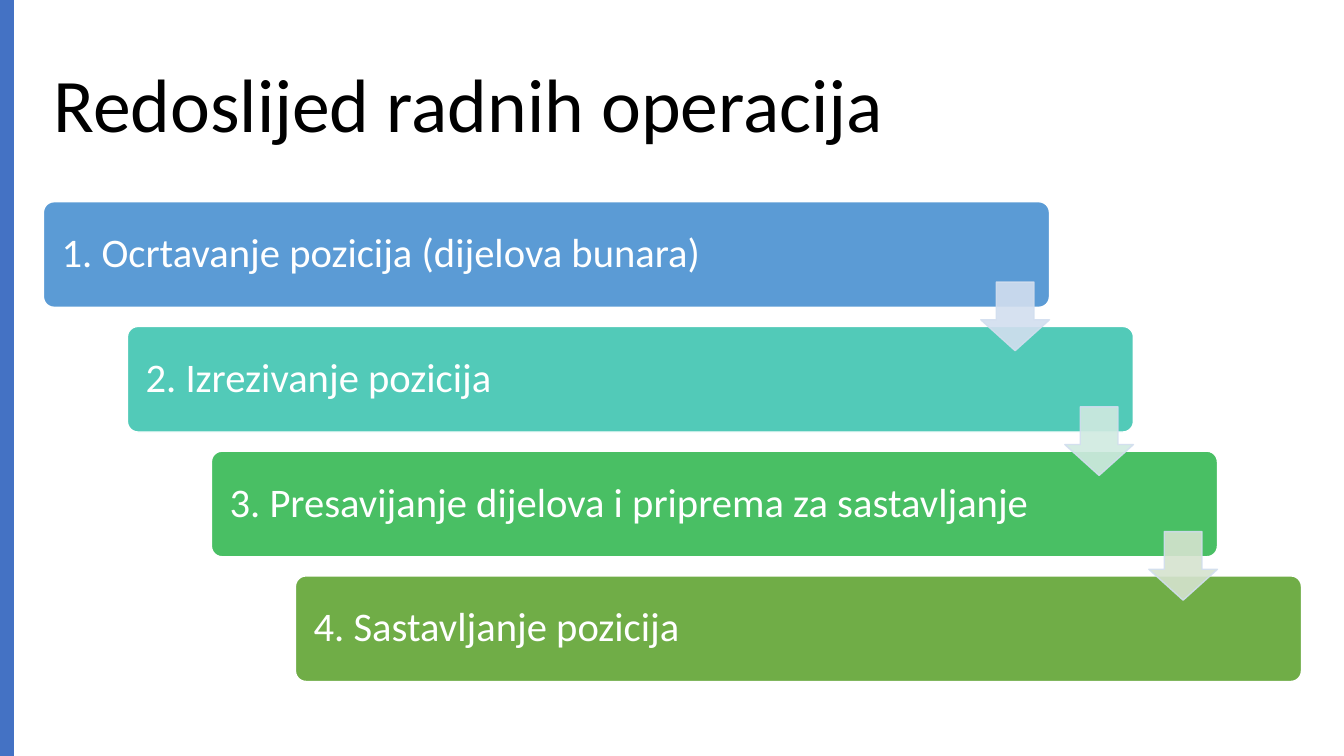
from lxml import etree
from pptx import Presentation
from pptx.dml.color import RGBColor
from pptx.enum.shapes import MSO_SHAPE
from pptx.enum.text import MSO_ANCHOR, PP_ALIGN
from pptx.oxml.ns import qn
from pptx.util import Pt

RECT = MSO_SHAPE.RECTANGLE
ROUNDED = MSO_SHAPE.ROUNDED_RECTANGLE
DOWN = MSO_SHAPE.DOWN_ARROW
MIDDLE = MSO_ANCHOR.MIDDLE
LEFT = PP_ALIGN.LEFT

TITLE = "Redoslijed radnih operacija"
STEPS = [
    ("1. Ocrtavanje pozicija (dijelova bunara)", "5B9BD5"),
    ("2. Izrezivanje pozicija", "52CAB8"),
    ("3. Presavijanje dijelova i priprema za sastavljanje", "49BF64"),
    ("4. Sastavljanje pozicija", "70AD47"),
]
ARROW_FILLS = ["D2DEEF", "D0EAE1", "D5E3CF"]
ARROW_LINE = "D2DEEF"
TITLE_FONT = {"name": "Calibri", "size": Pt(54)}
STEP_FONT = {"name": "Calibri", "size": Pt(29)}

SLIDE_W, SLIDE_H = 960, 540
LEFT_EDGE, FIRST_TOP = 31, 144.1
BAR_W, BAR_H = 718.6, 75.4
STEP_X, STEP_Y = 60, 89.1
ARROW_SIZE = 49
ARROW_DX, ARROW_DY = BAR_W - ARROW_SIZE, 57.4


def rgb(value):
    return RGBColor.from_string(value)


def add_shape(s, kind, box, fill, line=None, adjustments=()):
    sp = s.shapes.add_shape(kind, *[Pt(v) for v in box])
    sp.shadow.inherit = False
    sp.fill.solid()
    sp.fill.fore_color.rgb = rgb(fill)
    if line:
        sp.line.color.rgb = rgb(line)
        sp.line.width = Pt(1)
    else:
        sp.line.fill.background()
    for i, value in enumerate(adjustments):
        sp.adjustments[i] = value
    return sp


def set_text(sp, text, font, color, inset):
    tf = sp.text_frame
    frame = {"word_wrap": True, "vertical_anchor": MIDDLE,
             "margin_left": Pt(inset), "margin_right": Pt(inset)}
    for key, value in frame.items():
        setattr(tf, key, value)
    p = tf.paragraphs[0]
    p.alignment = LEFT
    p.line_spacing = 0.9
    r = p.add_run()
    r.text = text
    for key, value in font.items():
        setattr(r.font, key, value)
    r.font.color.rgb = rgb(color)


def set_opacity(sp, percent):
    for color in sp.element.spPr.iter(qn("a:srgbClr")):
        etree.SubElement(color, qn("a:alpha"), val=str(percent * 1000))


def main():
    prs = Presentation()
    prs.slide_width, prs.slide_height = Pt(SLIDE_W), Pt(SLIDE_H)
    s = prs.slides.add_slide(prs.slide_layouts[6])

    title = s.shapes.add_textbox(Pt(LEFT_EDGE), Pt(25.2), Pt(898.6), Pt(104.4))
    set_text(title, TITLE, TITLE_FONT, "000000", 7.2)
    add_shape(s, RECT, (0, 0, 10, SLIDE_H), "4472C4")

    corners = [(LEFT_EDGE + i * STEP_X, FIRST_TOP + i * STEP_Y)
               for i in range(len(STEPS))]
    for (x, y), (text, fill) in zip(corners, STEPS):
        bar = add_shape(s, ROUNDED, (x, y, BAR_W, BAR_H), fill, "FFFFFF", [0.1])
        set_text(bar, text, STEP_FONT, "FFFFFF", 10.8)

    for (x, y), fill in zip(corners, ARROW_FILLS):
        box = (x + ARROW_DX, y + ARROW_DY, ARROW_SIZE, ARROW_SIZE)
        arrow = add_shape(s, DOWN, box, fill, ARROW_LINE, [0.55, 0.45])
        set_opacity(arrow, 90)

    prs.save("out.pptx")


if __name__ == "__main__":
    main()
